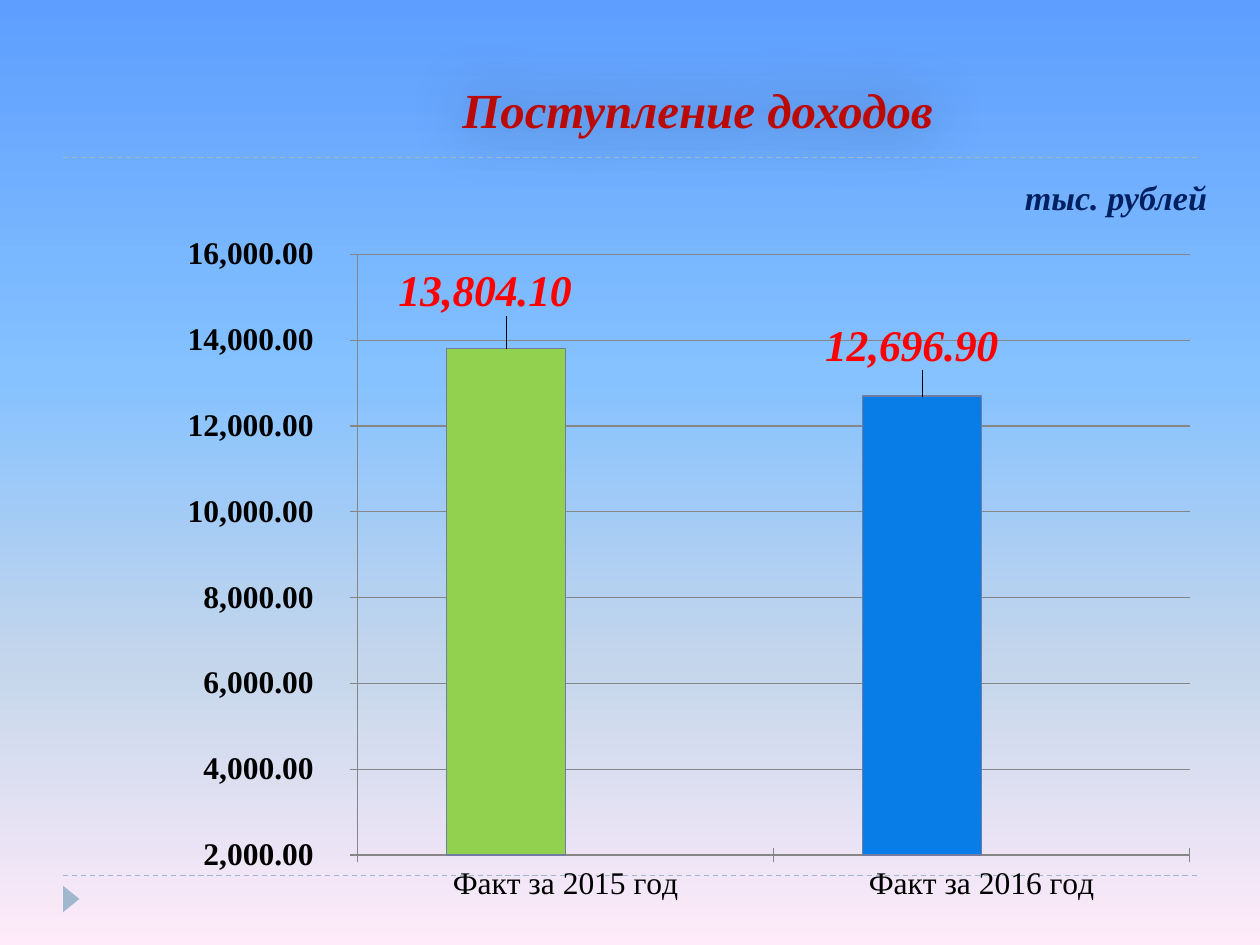
import dataclasses

import lxml.etree
import pptx
import pptx.chart.data
import pptx.dml.color
import pptx.enum.chart
import pptx.enum.dml
import pptx.enum.shapes
import pptx.enum.text
import pptx.oxml
import pptx.oxml.ns
import pptx.util

Inches = pptx.util.Inches
Pt = pptx.util.Pt
qn = pptx.oxml.ns.qn
DRAWING_NS = pptx.oxml.ns.nsdecls("a")


@dataclasses.dataclass(frozen=True)
class Theme:
    font: str = "Times New Roman"
    title: str = "BB0905"
    unit: str = "002060"
    label: str = "FF0000"
    text: str = "000000"
    grid: str = "868686"
    accent: str = "9FB8CD"
    bar_line: str = "727CA3"
    background: tuple = ((0, "5E9EFF"), (40, "85C2FF"), (70, "C4D6EB"), (100, "FFEBFA"))
    title_size: float = 28
    label_size: float = 25
    unit_size: float = 19.5
    axis_size: float = 18
    hairline: float = 0.75


@dataclasses.dataclass(frozen=True)
class Bar:
    category: str
    value: float
    color: str
    label_shift: tuple[float, float]  # shares of the chart's size


THEME = Theme()
WIDTH, HEIGHT = 10, 7.5
MARGIN = 0.05 * WIDTH
RULES = (6.95, 1.25)
PLOT_AREA = {"x": 0.19, "y": 0.04, "w": 0.79, "h": 0.87}
NUMBER_FORMAT = "#,##0.00"
AXIS_FORMAT = r"_-* #,##0.00_р_._-;\-* #,##0.00_р_._-;_-"
BARS = (
    Bar("Факт за 2015 год", 13804.1, "92D050", (-0.02, -0.04)),
    Bar("Факт за 2016 год", 12696.9, "097DE7", (-0.01, -0.03)),
)


def rgb(color: str) -> pptx.dml.color.RGBColor:
    return pptx.dml.color.RGBColor.from_string(color)


def style_font(font, size: float, color: str, bold: bool = False, italic: bool = False) -> None:
    font.name = THEME.font
    font.size = Pt(size)
    font.color.rgb = rgb(color)
    font.bold = bold
    font.italic = italic


def style_line(line, color: str) -> None:
    line.color.rgb = rgb(color)
    line.width = Pt(THEME.hairline)


def write(shape, text: str, size: float, color: str, alignment, anchor) -> None:
    frame = shape.text_frame
    frame.word_wrap = True
    frame.vertical_anchor = anchor
    paragraph = frame.paragraphs[0]
    paragraph.alignment = alignment
    run = paragraph.add_run()
    run.text = text
    style_font(run.font, size, color, bold=True, italic=True)


def paint_background(slide) -> None:
    fill = slide.background.fill
    fill.gradient()
    fill.gradient_angle = 270
    stops = slide.background._cSld.find(".//" + qn("a:gsLst"))
    for stop in list(stops):
        stops.remove(stop)
    for position, color in THEME.background:
        stop = lxml.etree.SubElement(stops, qn("a:gs"), pos=str(position * 1000))
        lxml.etree.SubElement(stop, qn("a:srgbClr"), val=color)


def add_rule(slide, top: float) -> None:
    rule = slide.shapes.add_connector(
        pptx.enum.shapes.MSO_CONNECTOR.STRAIGHT,
        Inches(MARGIN), Inches(top), Inches(WIDTH - MARGIN), Inches(top),
    )
    style_line(rule.line, THEME.accent)
    rule.line.dash_style = pptx.enum.dml.MSO_LINE.DASH
    lxml.etree.SubElement(rule._element.spPr, qn("a:effectLst"))


def add_marker(slide) -> None:
    marker = slide.shapes.add_shape(
        pptx.enum.shapes.MSO_SHAPE.ISOSCELES_TRIANGLE,
        Inches(0.46), Inches(7.07), Inches(0.21), Inches(0.13),
    )
    marker.rotation = 90
    marker.shadow.inherit = False
    marker.fill.solid()
    marker.fill.fore_color.rgb = rgb(THEME.accent)
    marker.line.fill.background()


def add_title(slide) -> None:
    title = slide.shapes.title
    title.left, title.top = Inches(1.17), Inches(0.31)
    title.width, title.height = Inches(8.83), Inches(0.84)
    write(title, "Поступление доходов ", THEME.title_size, THEME.title,
          pptx.enum.text.PP_ALIGN.CENTER, pptx.enum.text.MSO_ANCHOR.BOTTOM)
    title._element.spPr.append(pptx.oxml.parse_xml(
        f'<a:effectLst {DRAWING_NS}><a:outerShdw blurRad="{Inches(0.5)}" dist="0">'
        '<a:srgbClr val="000000"><a:alpha val="40000"/></a:srgbClr>'
        "</a:outerShdw></a:effectLst>"))


def add_unit(slide) -> None:
    unit = slide.shapes.add_textbox(Inches(7.89), Inches(1.33), Inches(1.79), Inches(0.47))
    write(unit, "тыс. рублей", THEME.unit_size, THEME.unit,
          pptx.enum.text.PP_ALIGN.RIGHT, pptx.enum.text.MSO_ANCHOR.MIDDLE)


def manual_layout(**values):
    """Build a c:layout; a width and height make it the inner plot area."""
    layout = lxml.etree.Element(qn("c:layout"))
    manual = lxml.etree.SubElement(layout, qn("c:manualLayout"))
    if "w" in values:
        lxml.etree.SubElement(manual, qn("c:layoutTarget"), val="inner")
        for side in "xy":
            lxml.etree.SubElement(manual, qn(f"c:{side}Mode"), val="edge")
    for name, value in values.items():
        lxml.etree.SubElement(manual, qn(f"c:{name}"), val=str(value))
    return layout


def style_bar(point, bar: Bar) -> None:
    point.format.fill.solid()
    point.format.fill.fore_color.rgb = rgb(bar.color)
    style_line(point.format.line, THEME.bar_line)
    label = point.data_label
    style_font(label.font, THEME.label_size, THEME.label, bold=True, italic=True)
    label.position = pptx.enum.chart.XL_LABEL_POSITION.OUTSIDE_END
    shift_x, shift_y = bar.label_shift
    label._get_or_add_dLbl().insert(1, manual_layout(x=shift_x, y=shift_y))


def style_axis(axis, bold: bool) -> None:
    style_font(axis.tick_labels.font, THEME.axis_size, THEME.text, bold)
    style_line(axis.format.line, THEME.grid)
    axis.major_tick_mark = pptx.enum.chart.XL_TICK_MARK.CROSS


def add_income_chart(slide) -> None:
    data = pptx.chart.data.CategoryChartData(number_format=NUMBER_FORMAT)
    data.categories = [bar.category for bar in BARS]
    data.add_series("Series 1", [bar.value for bar in BARS])
    data.add_series("Series 2", [None] * len(BARS))
    chart = slide.shapes.add_chart(
        pptx.enum.chart.XL_CHART_TYPE.COLUMN_CLUSTERED,
        Inches(1.25), Inches(1.8), Inches(8.36), Inches(5.48), data,
    ).chart
    chart.has_legend = False
    chart.has_title = False
    style_font(chart.font, THEME.axis_size, THEME.text)
    plot = chart.plots[0]
    plot.vary_by_categories = False
    plot.gap_width, plot.overlap = 150, 0
    for series in plot.series:
        series.format.fill.solid()
        series.format.fill.fore_color.rgb = rgb(THEME.accent)
    for index, bar in enumerate(BARS):
        style_bar(plot.series[0].points[index], bar)

    style_axis(chart.category_axis, bold=False)
    axis = chart.value_axis
    style_axis(axis, bold=True)
    axis.minimum_scale, axis.maximum_scale, axis.major_unit = 2000, 16000, 2000
    axis.tick_labels.number_format = AXIS_FORMAT
    axis.tick_labels.number_format_is_linked = False
    style_line(axis.major_gridlines.format.line, THEME.grid)

    plot_area = chart._chartSpace.chart.plotArea
    for layout in plot_area.findall(qn("c:layout")):
        plot_area.remove(layout)
    plot_area.insert(0, manual_layout(**PLOT_AREA))


def main() -> None:
    presentation = pptx.Presentation()
    presentation.slide_width, presentation.slide_height = Inches(WIDTH), Inches(HEIGHT)
    slide = presentation.slides.add_slide(presentation.slide_layouts.get_by_name("Title Only"))
    paint_background(slide)
    for top in RULES:
        add_rule(slide, top)
    add_marker(slide)
    add_title(slide)
    add_income_chart(slide)
    add_unit(slide)
    presentation.save("out.pptx")


if __name__ == "__main__":
    main()
